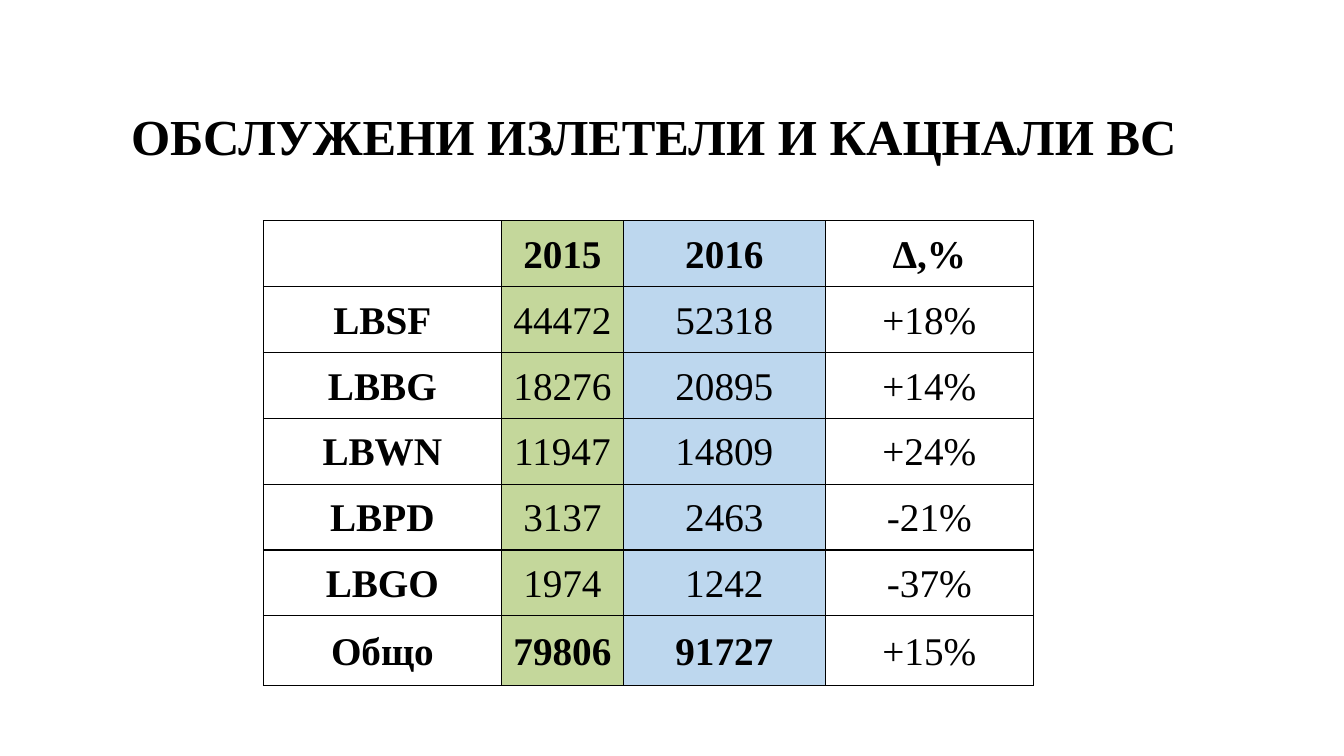
"""Build the slide of departed and landed aircraft per airport."""
from lxml.etree import SubElement
from pptx import Presentation
from pptx.dml.color import RGBColor
from pptx.enum.text import MSO_ANCHOR as Anchor, MSO_AUTO_SIZE as AutoSize, PP_ALIGN as Align
from pptx.oxml.ns import qn
from pptx.util import Inches, Pt

WIDTH, HEIGHT = Inches(13.33), Inches(7.5)
FONT = "Times New Roman"
BLACK = RGBColor(0x00, 0x00, 0x00)
WHITE = RGBColor(0xFF, 0xFF, 0xFF)
GREEN = RGBColor(0xC4, 0xD7, 0x9B)
BLUE = RGBColor(0xBD, 0xD7, 0xEE)

TITLE = "ОБСЛУЖЕНИ ИЗЛЕТЕЛИ И КАЦНАЛИ ВС"
FLIGHTS = [
    ("", "2015", "2016", "Δ,%"),
    ("LBSF", "44472", "52318", "+18%"),
    ("LBBG", "18276", "20895", "+14%"),
    ("LBWN", "11947", "14809", "+24%"),
    ("LBPD", "3137", "2463", "-21%"),
    ("LBGO", "1974", "1242", "-37%"),
    ("Общо", "79806", "91727", "+15%"),
]
COLUMN_SHARES = [17.7, 9.1, 15, 15.5]
COLUMN_FILLS = [WHITE, GREEN, BLUE, WHITE]
ROW_SHARES = [8.71] * (len(FLIGHTS) - 1) + [9.2]


def across(percent):
    return int(WIDTH * percent / 100)


def down(percent):
    return int(HEIGHT * percent / 100)


def add_run(para, text, size, bold):
    run = para.add_run()
    run.text = text
    run.font.name = FONT
    run.font.size = Pt(size)
    run.font.bold = bold
    run.font.color.rgb = BLACK


def set_title(page):
    title = page.shapes.title
    title.left, title.top = across(9), down(13.2)
    title.width, title.height = across(91), down(9.47)
    frame = title.text_frame
    frame.word_wrap = True
    frame.auto_size = AutoSize.NONE
    frame.vertical_anchor = Anchor.TOP
    para = frame.paragraphs[0]
    para.alignment = Align.LEFT
    para.line_spacing = 1.0
    para.space_before = Pt(0)
    add_run(para, TITLE, 36, True)


def add_borders(cell):
    properties = cell._tc.get_or_add_tcPr()
    for side in ("a:lnL", "a:lnR", "a:lnT", "a:lnB"):
        line = SubElement(properties, qn(side), w=str(Pt(1)))
        fill = SubElement(line, qn("a:solidFill"))
        SubElement(fill, qn("a:srgbClr"), val=str(BLACK))


def fill_cell(cell, text, color, bold):
    add_borders(cell)
    cell.fill.solid()
    cell.fill.fore_color.rgb = color
    cell.vertical_anchor = Anchor.MIDDLE
    cell.margin_left = cell.margin_right = Inches(0.07)
    cell.margin_top = cell.margin_bottom = 0
    if text:
        para = cell.text_frame.paragraphs[0]
        para.alignment = Align.CENTER
        para.line_spacing = 1.07
        para.space_after = Pt(8)
        add_run(para, text, 28, bold)


def add_flight_table(page):
    last_row, last_column = len(FLIGHTS) - 1, len(COLUMN_SHARES) - 1
    table = page.shapes.add_table(
        len(FLIGHTS), len(COLUMN_SHARES), across(19.6), down(29.2),
        across(sum(COLUMN_SHARES)), down(sum(ROW_SHARES))).table
    table.horz_banding = False
    for column, share in zip(table.columns, COLUMN_SHARES):
        column.width = across(share)
    for row, share in zip(table.rows, ROW_SHARES):
        row.height = down(share)
    for row, values in enumerate(FLIGHTS):
        for column, text in enumerate(values):
            is_total = row == last_row and column < last_column
            bold = row == 0 or column == 0 or is_total
            fill_cell(table.cell(row, column), text, COLUMN_FILLS[column], bold)


def main():
    deck = Presentation()
    deck.slide_width, deck.slide_height = WIDTH, HEIGHT
    page = deck.slides.add_slide(deck.slide_layouts[5])
    set_title(page)
    add_flight_table(page)
    deck.save("out.pptx")


if __name__ == "__main__":
    main()
